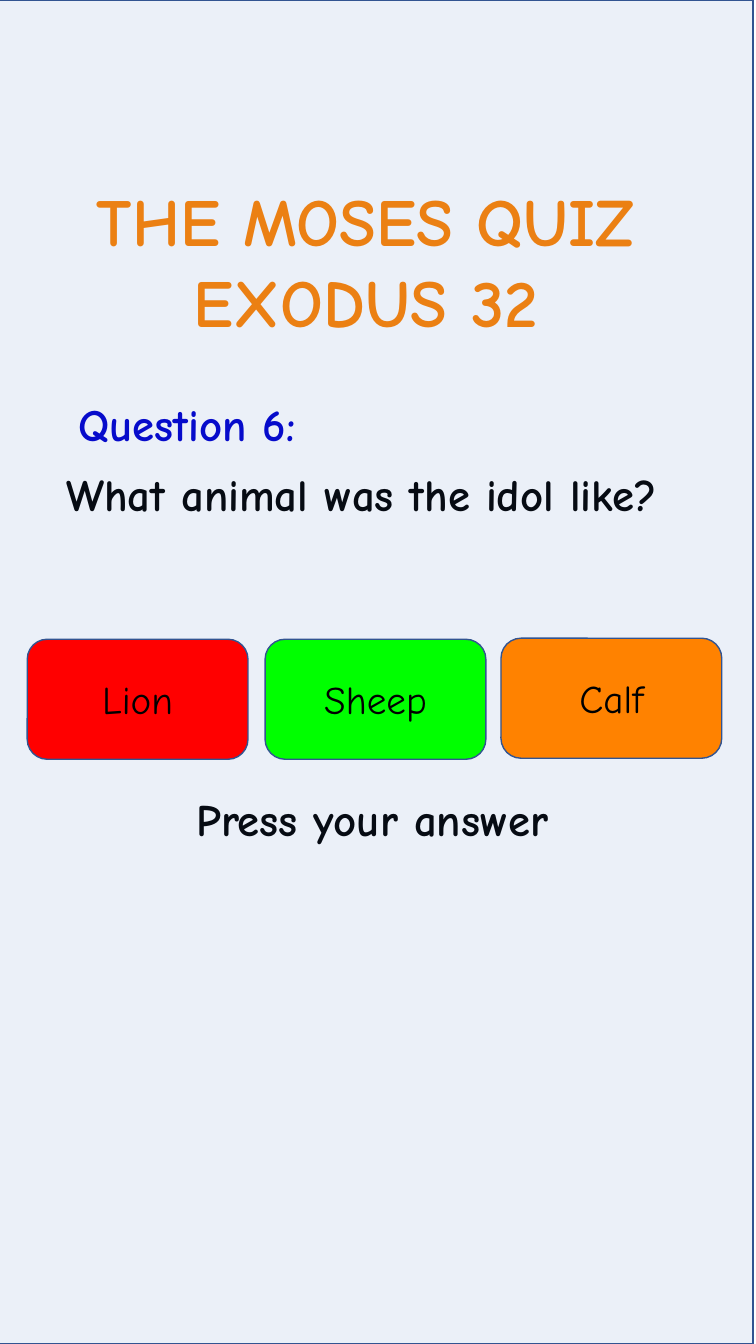
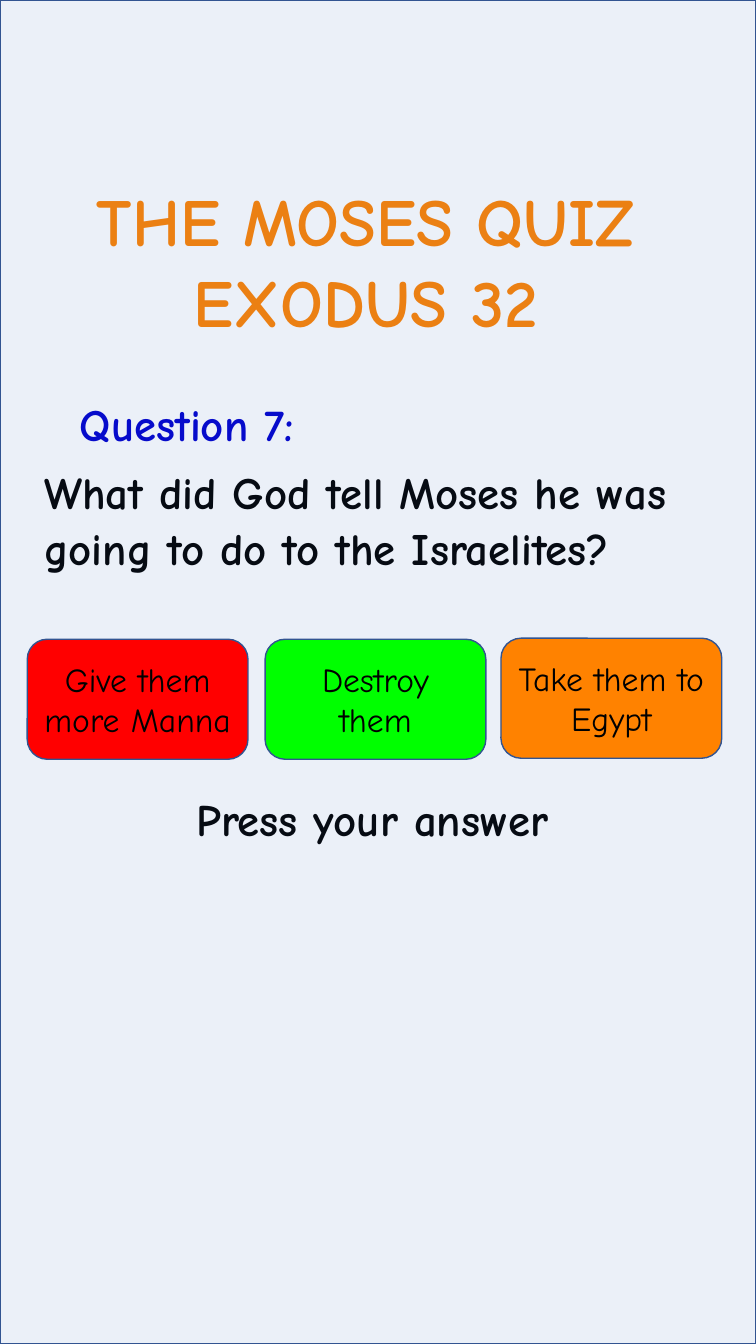
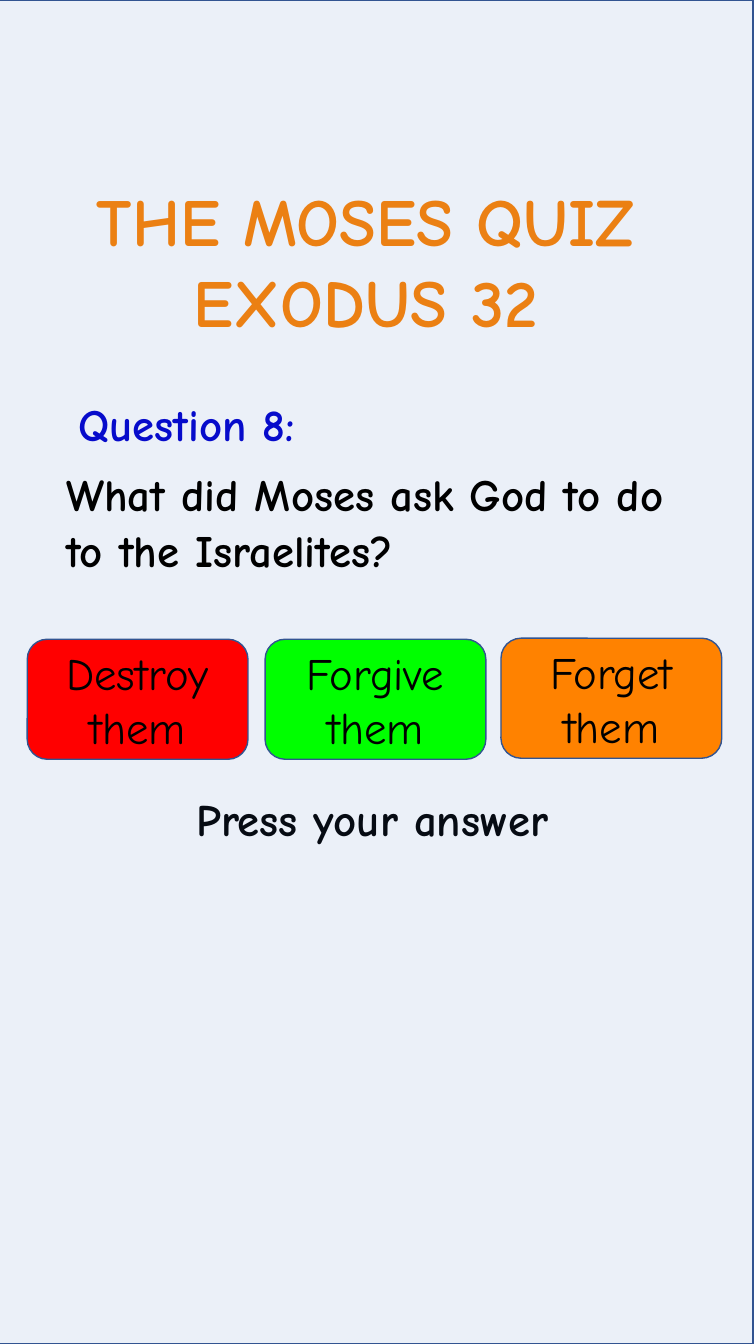
from pptx import Presentation
from pptx.dml.color import RGBColor
from pptx.enum.shapes import MSO_SHAPE
from pptx.enum.text import MSO_ANCHOR, MSO_AUTO_SIZE, PP_ALIGN
from pptx.oxml.ns import qn
from pptx.util import Pt
from lxml.etree import SubElement

EMU_PER_PX = 9144
WIDTH, HEIGHT = 750, 1333
FONT = "Comic Neue"
COLOURS = {
    "title": "FF8200",
    "label": "0000CC",
    "text": "000000",
    "veil": "4472C4",
    "outline": "325491",
    "red": "FF0000",
    "green": "00FF00",
    "orange": "FF8200",
}
BUTTONS = [("red", 27, 634), ("green", 263, 634), ("orange", 497, 633)]
QUESTIONS = [
    {
        "number": 6,
        "question": "What animal was the idol like?",
        "area": (56, 456, 660, 146),
        "answers": ["Lion", "Sheep", "Calf"],
        "size": 28,
        "veil_left": -3,
        "question_on_top": False,
    },
    {
        "number": 7,
        "question": "What did God tell Moses he was going to do to the Israelites?",
        "area": (34, 454, 670, 177),
        "answers": ["Give them more Manna", "Destroy them", "Take them to Egypt"],
        "size": 24,
        "veil_left": 0,
        "question_on_top": False,
    },
    {
        "number": 8,
        "question": "What did Moses ask God to do to the Israelites?",
        "area": (56, 456, 636, 146),
        "answers": ["Destroy them", "Forgive them", "Forget them"],
        "size": 32,
        "veil_left": -3,
        "question_on_top": True,
    },
]


class QuizDeck:
    """Quiz slides in one shared style."""

    def __init__(self):
        self.deck = Presentation()
        self.deck.slide_width = WIDTH * EMU_PER_PX
        self.deck.slide_height = HEIGHT * EMU_PER_PX
        self.page = None

    def new_page(self):
        self.page = self.deck.slides.add_slide(self.deck.slide_layouts[6])

    def place(self, area):
        return [length * EMU_PER_PX for length in area]

    def fill_text(self, frame, lines, size, colour="text", bold=True, align=PP_ALIGN.LEFT,
                  spacing=None, before=None):
        for index, line in enumerate(lines):
            para = frame.add_paragraph() if index else frame.paragraphs[0]
            para.text = line
            para.alignment = align
            para.line_spacing = spacing
            para.space_before = before
            para.font.name = FONT
            para.font.size = Pt(size)
            para.font.bold = bold
            para.font.color.rgb = RGBColor.from_string(COLOURS[colour])

    def heading(self, area, lines, size, colour):
        frame = self.page.shapes.add_textbox(*self.place(area)).text_frame
        frame.word_wrap = False
        frame.auto_size = MSO_AUTO_SIZE.SHAPE_TO_FIT_TEXT
        self.fill_text(frame, lines, size, colour, align=PP_ALIGN.CENTER)

    def body(self, area, text, spacing):
        frame = self.page.shapes.add_textbox(*self.place(area)).text_frame
        frame.word_wrap = True
        self.fill_text(frame, [text], 32, spacing=spacing, before=Pt(7.5))

    def panel(self, kind, area, colour):
        box = self.page.shapes.add_shape(kind, *self.place(area))
        box.shadow.inherit = False
        box.fill.solid()
        box.fill.fore_color.rgb = RGBColor.from_string(COLOURS[colour])
        box.line.color.rgb = RGBColor.from_string(COLOURS["outline"])
        box.line.width = Pt(1)
        return box

    def veil(self, left):
        box = self.panel(MSO_SHAPE.RECTANGLE, (left, 0, WIDTH, HEIGHT), "veil")
        colour = box.element.spPr.find(qn("a:solidFill")).find(qn("a:srgbClr"))
        SubElement(colour, qn("a:alpha"), val="10000")

    def button(self, left, top, colour, text, size):
        box = self.panel(MSO_SHAPE.ROUNDED_RECTANGLE, (left, top, 219, 119), colour)
        frame = box.text_frame
        frame.word_wrap = True
        frame.vertical_anchor = MSO_ANCHOR.MIDDLE
        self.fill_text(frame, [text], size, bold=False, align=PP_ALIGN.CENTER)

    def quiz_page(self, number, question, area, answers, size, veil_left, question_on_top):
        self.new_page()
        self.heading((30, 173, 689, 172), ["THE MOSES QUIZ ", "EXODUS 32 "], 48, "title")
        self.heading((47, 389, 277, 64), [f"Question {number}:"], 32, "label")
        if not question_on_top:
            self.body(area, question, Pt(40))
        self.body((185, 786, 422, 72), "Press your answer", 0.9)
        self.veil(veil_left)
        if question_on_top:
            self.body(area, question, Pt(40))
        for (colour, left, top), answer in zip(BUTTONS, answers):
            self.button(left, top, colour, answer, size)


def main():
    quiz = QuizDeck()
    for entry in QUESTIONS:
        quiz.quiz_page(**entry)
    quiz.deck.save("out.pptx")


if __name__ == "__main__":
    main()
